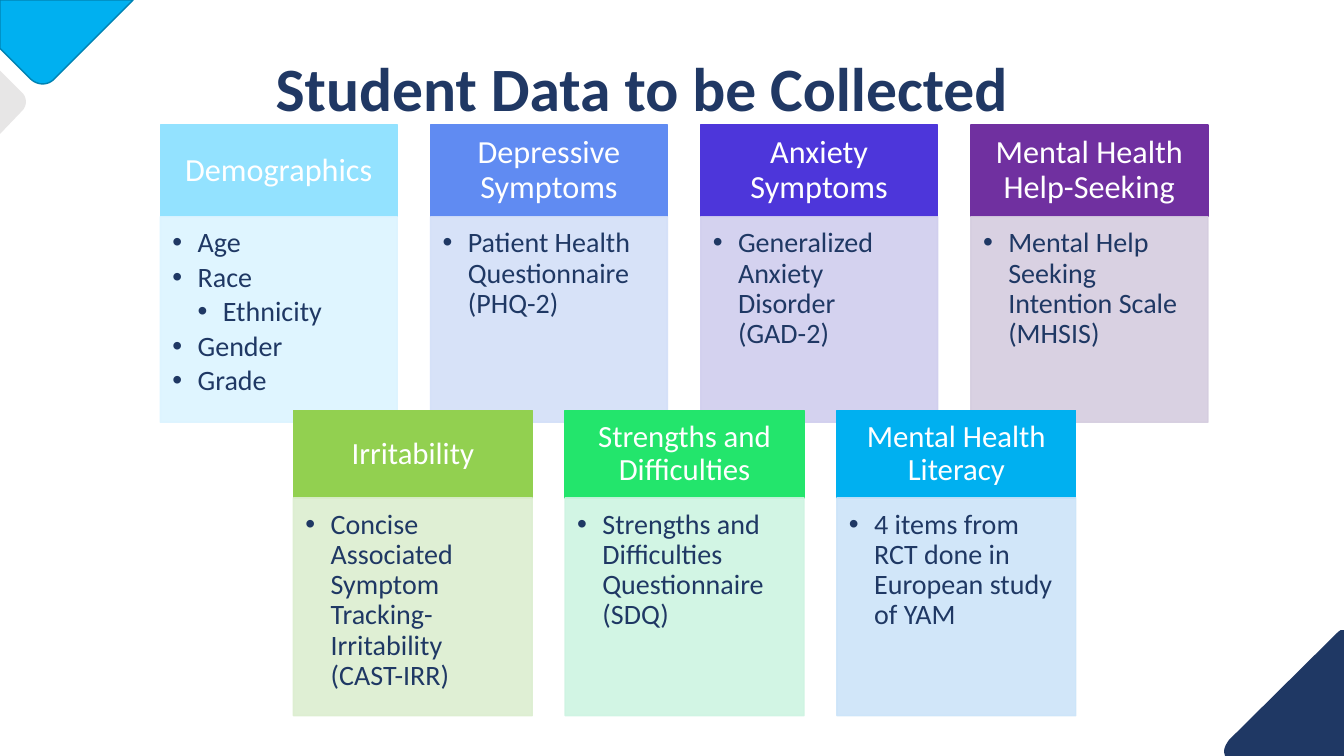
from lxml.etree import SubElement
from pptx import Presentation
from pptx.dml.color import RGBColor
from pptx.enum.shapes import MSO_SHAPE
from pptx.enum.text import MSO_ANCHOR, PP_ALIGN
from pptx.oxml.ns import qn
from pptx.util import Inches, Pt

COLORS = {"navy": "203864", "body": "1F3864", "white": "FFFFFF",
          "sky": "00B0F0", "sky_edge": "0082B2", "gray": "E7E6E6"}
FONT = "Calibri"
INDENT = 0.25

CORNERS = [
    ("body", None, [(13.33, 6.25), (13.33, 7.5), (12.15, 7.5), (12.14, 7.46),
                    [(12.14, 7.42), (12.16, 7.38), (12.19, 7.34)], (13.25, 6.29),
                    [(13.26, 6.28), (13.28, 6.26), (13.3, 6.25)]]),
    ("sky", "sky_edge", [(0, 0), (1.32, 0), (0.54, 0.78),
                         [(0.48, 0.85), (0.37, 0.85), (0.3, 0.78)], (0, 0.48)]),
    ("gray", None, [(0, 0.7), (0.22, 0.92),
                    [(0.27, 0.97), (0.27, 1.05), (0.22, 1.1)], (0, 1.33)]),
]

TOP_CARDS = [
    ("Demographics", "93E2FF", "DCF4FF",
     [("Age", 0), ("Race", 0), ("Ethnicity", 1), ("Gender", 0), ("Grade", 0)]),
    ("Depressive Symptoms", "608BF2", "D3DFF8",
     [("Patient Health Questionnaire (PHQ-2)", 0)]),
    ("Anxiety Symptoms", "4D36DA", "D0CEEE",
     [("Generalized Anxiety Disorder (GAD-2)", 0)]),
    ("Mental Health Help-Seeking", "7030A0", "D5CDDF",
     [("Mental Help Seeking Intention Scale (MHSIS)", 0)]),
]
BOTTOM_CARDS = [
    ("Irritability", "92D050", "DCEED0",
     [("Concise Associated Symptom Tracking-Irritability (CAST-IRR)", 0)]),
    ("Strengths and Difficulties", "23E56C", "CEF4E2",
     [("Strengths and Difficulties Questionnaire (SDQ)", 0)]),
    ("Mental Health Literacy", "00B0F0", "CCE4F9",
     [("4 items from RCT done in European study of YAM", 0)]),
]


def paint(shape, fill, line=None):
    """Give a shape a flat fill and an optional one-point outline."""
    shape.shadow.inherit = False
    shape.fill.solid()
    shape.fill.fore_color.rgb = RGBColor.from_string(fill)
    if line:
        shape.line.color.rgb = RGBColor.from_string(line)
        shape.line.width = Pt(1)
    else:
        shape.line.fill.background()


def style_text(paragraph, size, color, bold=False):
    """Set the spacing and font of a paragraph."""
    paragraph.line_spacing = 0.9
    font = paragraph.font
    font.name, font.size, font.bold = FONT, Pt(size), bold
    font.color.rgb = RGBColor.from_string(color)


def set_frame(frame, anchor, margins):
    """Set wrapping, anchor and left, top, right, bottom margins."""
    frame.word_wrap = True
    frame.vertical_anchor = anchor
    (frame.margin_left, frame.margin_top,
     frame.margin_right, frame.margin_bottom) = map(Inches, margins)


def add_bullet(paragraph, level):
    """Give a paragraph a hanging bullet for its level."""
    paragraph.level = level
    properties = paragraph._p.get_or_add_pPr()
    properties.set("marL", str(Inches(INDENT * (level + 1))))
    properties.set("indent", str(-Inches(INDENT)))
    SubElement(properties, qn("a:buFont"), typeface="Arial")
    SubElement(properties, qn("a:buChar"), char="•")


def curve_points(start, controls, steps=12):
    """Return points along a cubic curve from start."""
    points = [start, *controls]
    weights = [((1 - t) ** 3, 3 * t * (1 - t) ** 2, 3 * t * t * (1 - t), t ** 3)
               for t in (step / steps for step in range(1, steps + 1))]
    return [tuple(sum(w * p[axis] for w, p in zip(weight, points)) for axis in (0, 1))
            for weight in weights]


def add_corner(slide, fill, line, outline):
    """Draw a rounded corner ornament from points and curves."""
    points = []
    for part in outline:
        points += curve_points(points[-1], part) if isinstance(part, list) else [part]
    points = [(Inches(x), Inches(y)) for x, y in points]
    builder = slide.shapes.build_freeform(*points[0])
    builder.add_line_segments(points[1:], close=True)
    paint(builder.convert_to_shape(), COLORS[fill], COLORS.get(line))


def add_title(slide, text, left, top, width, height):
    """Place the centred slide title in the given box."""
    title = slide.shapes.add_textbox(*map(Inches, (left, top, width, height)))
    set_frame(title.text_frame, MSO_ANCHOR.MIDDLE, (0.1, 0.05, 0.1, 0.05))
    paragraph = title.text_frame.paragraphs[0]
    paragraph.text = text
    paragraph.alignment = PP_ALIGN.CENTER
    style_text(paragraph, 44, COLORS["navy"], bold=True)


def add_card(group, card, left, top, width, height, header_height, header_size):
    """Stack a header and a bulleted panel in the given box."""
    heading, header_color, panel_color, items = card
    header = group.shapes.add_shape(
        MSO_SHAPE.RECTANGLE, *map(Inches, (left, top, width, header_height)))
    paint(header, header_color, header_color)
    set_frame(header.text_frame, MSO_ANCHOR.MIDDLE, (0.18, 0.1, 0.18, 0.1))
    paragraph = header.text_frame.paragraphs[0]
    paragraph.text = heading
    paragraph.alignment = PP_ALIGN.CENTER
    style_text(paragraph, header_size, COLORS["white"])

    panel = group.shapes.add_shape(
        MSO_SHAPE.RECTANGLE,
        *map(Inches, (left, top + header_height, width, height - header_height)))
    paint(panel, panel_color, panel_color)
    for color in panel._element.spPr.iter(qn("a:srgbClr")):
        SubElement(color, qn("a:alpha"), val="90000")
    frame = panel.text_frame
    set_frame(frame, MSO_ANCHOR.TOP, (0.12, 0.12, 0.16, 0.17))
    for index, (text, level) in enumerate(items):
        paragraph = frame.add_paragraph() if index else frame.paragraphs[0]
        paragraph.text = text
        add_bullet(paragraph, level)
        paragraph.alignment = PP_ALIGN.LEFT
        paragraph.space_after = Pt(3)
        style_text(paragraph, 20, COLORS["body"])


def add_card_row(slide, cards, left, top, width, height, card_width,
                 header_height, header_size):
    """Spread cards evenly over the given box as one group."""
    group = slide.shapes.add_group_shape()
    pitch = (width - card_width) / (len(cards) - 1)
    for column, card in enumerate(cards):
        add_card(group, card, left + column * pitch, top, card_width, height,
                 header_height, header_size)


def main():
    """Build and save the slide."""
    presentation = Presentation()
    presentation.slide_width, presentation.slide_height = Inches(13.33), Inches(7.5)
    slide = presentation.slides.add_slide(presentation.slide_layouts[6])
    for corner in CORNERS:
        add_corner(slide, *corner)
    add_title(slide, "Student Data to be Collected", 1.4, 0.4, 9.94, 1.02)
    add_card_row(slide, TOP_CARDS, 1.59, 1.24, 10.39, 2.95, 2.35, 0.91, 23)
    add_card_row(slide, BOTTOM_CARDS, 2.91, 4.07, 7.76, 3.03, 2.37, 0.87, 22)
    presentation.save("out.pptx")


if __name__ == "__main__":
    main()
